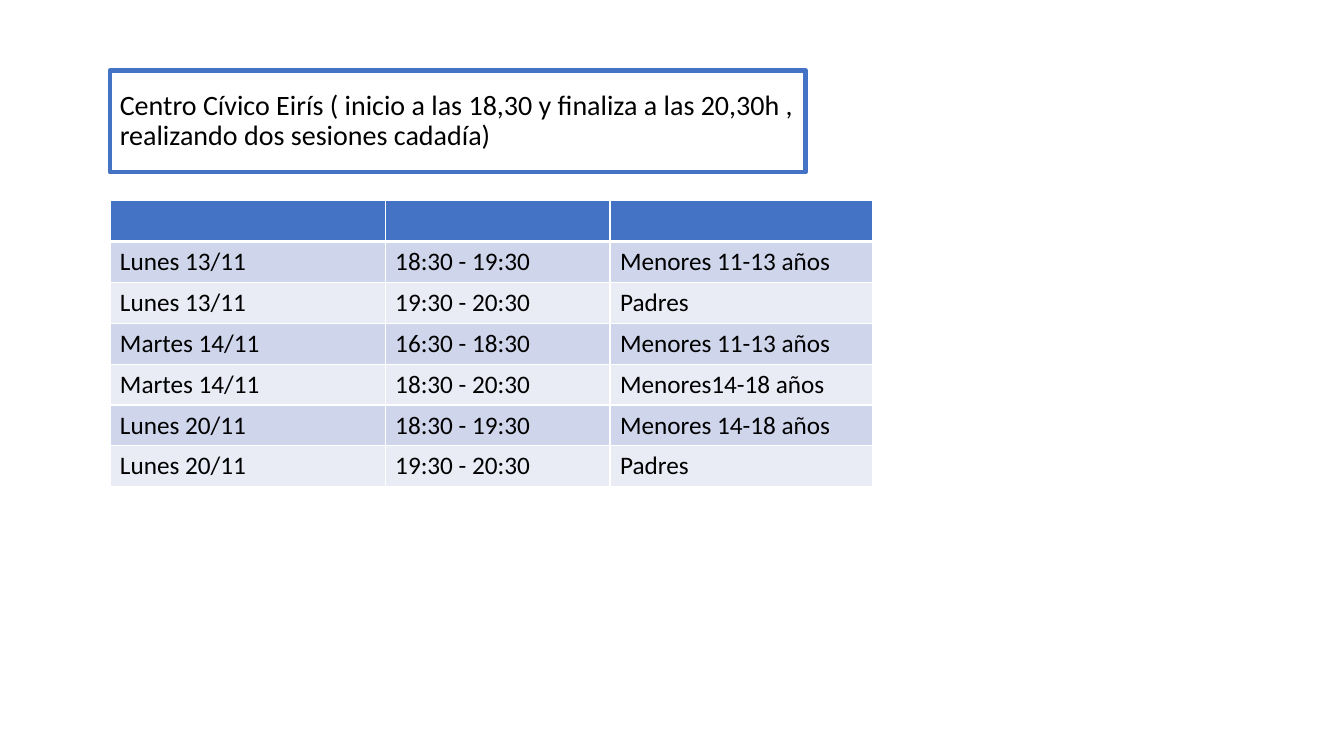
from dataclasses import dataclass

from lxml import etree
from pptx import Presentation
from pptx import util as u
from pptx.dml.color import RGBColor
from pptx.enum import shapes, text
from pptx.oxml.ns import qn

SCALE = u.Inches(1) // 100


@dataclass(frozen=True)
class Theme:
    """Colours, font and type sizes of the slide."""
    font: str = "Calibri"
    ink: str = "000000"
    paper: str = "FFFFFF"
    blue: str = "4472C4"
    bands: tuple = ("CFD5EA", "E9EBF5")
    title: int = 20
    body: int = 18
    thin: int = 1
    thick: int = 3


THEME = Theme()
TITLE = ("Centro Cívico Eirís ( inicio a las 18,30 y finaliza a las 20,30h , "
         "realizando dos sesiones cadadía)")
COLS = (273, 223, 260)
ROW = 40
ROWS = (
    ("", "", ""),
    ("Lunes 13/11", "18:30 - 19:30", "Menores 11-13 años"),
    ("Lunes 13/11", "19:30 - 20:30", "Padres"),
    ("Martes 14/11", "16:30 - 18:30", "Menores 11-13 años"),
    ("Martes 14/11", "18:30 - 20:30", "Menores14-18 años"),
    ("Lunes 20/11", "18:30 - 19:30", "Menores 14-18 años"),
    ("Lunes 20/11", "19:30 - 20:30", "Padres"),
)


def px(n):
    """Turn px into EMU."""
    return u.Emu(n * SCALE)


def paint(fill, color):
    """Give a fill one solid colour."""
    fill.solid()
    fill.fore_color.rgb = RGBColor.from_string(color)


def write(para, words, size):
    """Add one run of text to a paragraph."""
    run = para.add_run()
    run.text = words
    run.font.name = THEME.font
    run.font.size = u.Pt(size)
    run.font.color.rgb = RGBColor.from_string(THEME.ink)


def edge(cell, top, base):
    """Draw the white borders of a cell, widths in points."""
    props = cell._tc.get_or_add_tcPr()
    sides = (("L", THEME.thin), ("R", THEME.thin), ("T", top), ("B", base))
    for at, (side, width) in enumerate(sides):
        line = etree.Element(qn(f"a:ln{side}"), w=str(u.Pt(width)))
        fill = etree.SubElement(line, qn("a:solidFill"))
        etree.SubElement(fill, qn("a:srgbClr"), val=THEME.paper)
        props.insert(at, line)


def head(slide, box):
    """Place the framed title in its box."""
    frame = slide.shapes.add_shape(
        shapes.MSO_SHAPE.RECTANGLE, *map(px, box))
    frame.shadow.inherit = False
    paint(frame.fill, THEME.paper)
    paint(frame.line.fill, THEME.blue)
    frame.line.width = u.Pt(THEME.thick)
    body = frame.text_frame
    body.word_wrap = True
    body.vertical_anchor = text.MSO_ANCHOR.MIDDLE
    para = body.paragraphs[0]
    para.alignment = text.PP_ALIGN.LEFT
    para.line_spacing = 0.9
    write(para, TITLE, THEME.title)


def grid(slide, box):
    """Place the table of sessions in its box."""
    table = slide.shapes.add_table(
        len(ROWS), len(COLS), *map(px, box)).table
    for col, width in zip(table.columns, COLS):
        col.width = px(width)
    for r, words in enumerate(ROWS):
        table.rows[r].height = px(ROW)
        color = THEME.bands[(r - 1) % 2] if r else THEME.blue
        top = THEME.thick if r == 1 else THEME.thin
        base = THEME.thin if r else THEME.thick
        for c, word in enumerate(words):
            cell = table.cell(r, c)
            paint(cell.fill, color)
            edge(cell, top, base)
            para = cell.text_frame.paragraphs[0]
            para.font.size = u.Pt(THEME.body)
            if word:
                write(para, word, THEME.body)


def main():
    """Build the slide and save it."""
    deck = Presentation()
    deck.slide_width, deck.slide_height = px(1333), px(750)
    slide = deck.slides.add_slide(deck.slide_layouts[6])
    grid(slide, (109, 199, sum(COLS), ROW * len(ROWS)))
    head(slide, (109, 70, 690, 101))
    deck.save("out.pptx")


if __name__ == "__main__":
    main()
